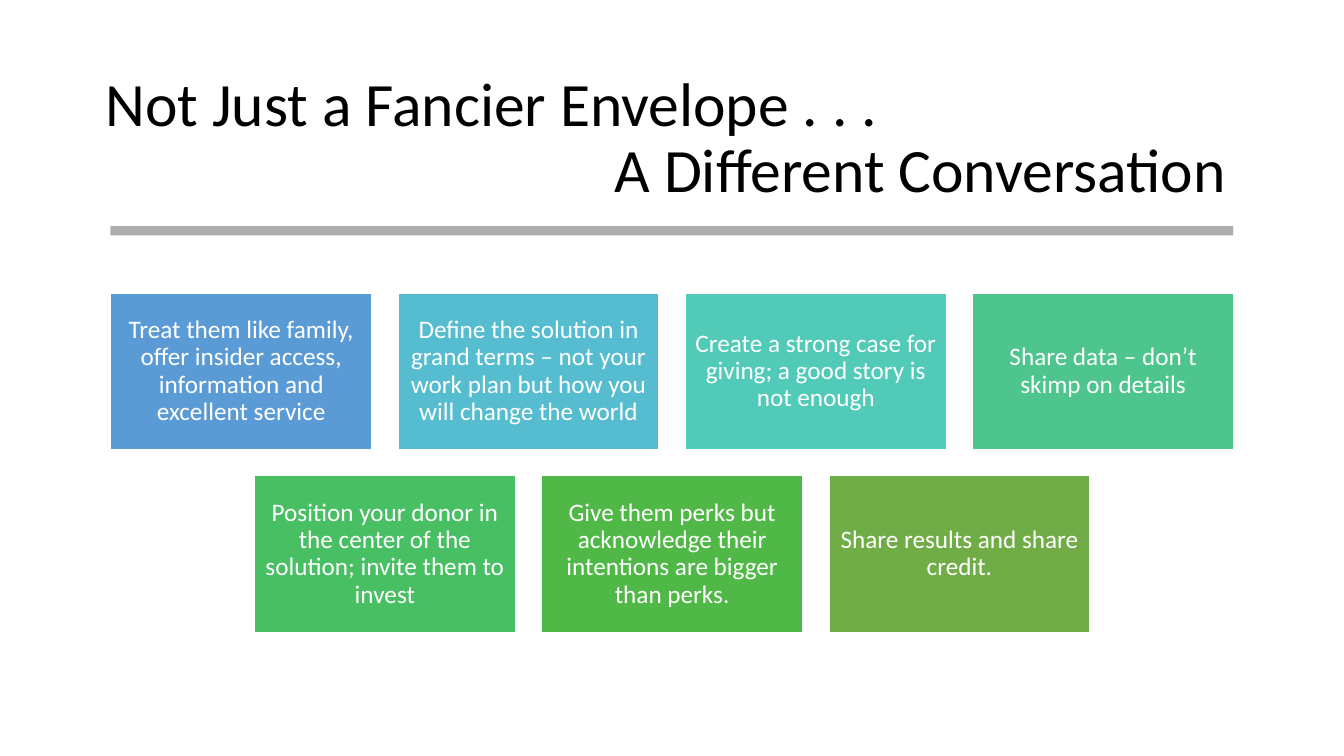
from lxml import etree
from pptx import Presentation
from pptx.dml.color import RGBColor
from pptx.enum.shapes import MSO_SHAPE
from pptx.enum.text import MSO_ANCHOR, PP_ALIGN
from pptx.oxml.ns import qn
from pptx.util import Cm, Pt

RECTANGLE = MSO_SHAPE.RECTANGLE
MIDDLE = MSO_ANCHOR.MIDDLE
LEFT, CENTER, RIGHT = PP_ALIGN.LEFT, PP_ALIGN.CENTER, PP_ALIGN.RIGHT

ROWS = [
    [
        ("Treat them like family, offer insider access, information and excellent service", "5B9BD5"),
        ("Define the solution in grand terms – not your work plan but how you will change the world", "56BCD0"),
        ("Create a strong case for giving; a good story is not enough", "52CAB8"),
        ("Share data – don’t skimp on details", "4DC58D"),
    ],
    [
        ("Position your donor in the center of the solution; invite them to invest", "49BF64"),
        ("Give them perks but acknowledge their intentions are bigger than perks.", "50B846"),
        ("Share results and share credit.", "70AD47"),
    ],
]
CARD_WIDTH, CARD_HEIGHT, GAP = 6.58, 3.95, 0.66
CARDS_TOP, CARDS_CENTER = 7.38, 16.94


def color(value):
    return RGBColor.from_string(value)


def format_paragraph(paragraph, alignment, size, font_color):
    paragraph.alignment = alignment
    paragraph.line_spacing = 0.9
    for run in paragraph.runs:
        run.font.name = "Calibri"
        run.font.size = Pt(size)
        run.font.color.rgb = color(font_color)


presentation = Presentation()
presentation.slide_width = Cm(33.87)
presentation.slide_height = Cm(19.05)
slide = presentation.slides.add_slide(presentation.slide_layouts[6])

title = slide.shapes.add_textbox(Cm(2.41), Cm(1.68), Cm(28.75), Cm(3.68))
title_frame = title.text_frame
title_frame.word_wrap = True
title_frame.vertical_anchor = MIDDLE
title_frame.text = "Not Just a Fancier Envelope . . .\nA Different Conversation"
for paragraph, alignment in zip(title_frame.paragraphs, (LEFT, RIGHT)):
    format_paragraph(paragraph, alignment, 44, "000000")

divider = slide.shapes.add_shape(RECTANGLE, Cm(2.78), Cm(5.7), Cm(28.3), Cm(0.23))
divider.shadow.inherit = False
divider.fill.solid()
divider.fill.fore_color.rgb = color("808080")
divider.line.fill.background()
divider_color = divider.fill._xPr.find(qn("a:solidFill"))[0]
etree.SubElement(divider_color, qn("a:alpha")).set("val", "65000")

for row_index, row in enumerate(ROWS):
    row_width = len(row) * (CARD_WIDTH + GAP) - GAP
    row_left = CARDS_CENTER - row_width / 2
    top = CARDS_TOP + row_index * (CARD_HEIGHT + GAP)
    for column, (text, fill_color) in enumerate(row):
        left = row_left + column * (CARD_WIDTH + GAP)
        card = slide.shapes.add_shape(RECTANGLE, Cm(left), Cm(top), Cm(CARD_WIDTH), Cm(CARD_HEIGHT))
        card.shadow.inherit = False
        card.fill.solid()
        card.fill.fore_color.rgb = color(fill_color)
        card.line.color.rgb = color("FFFFFF")
        card.line.width = Pt(1)
        frame = card.text_frame
        frame.margin_left = frame.margin_right = Cm(0.18)
        frame.margin_top = frame.margin_bottom = Cm(0.18)
        frame.word_wrap = True
        frame.vertical_anchor = MIDDLE
        frame.text = text
        format_paragraph(frame.paragraphs[0], CENTER, 18, "FFFFFF")

presentation.save("out.pptx")
